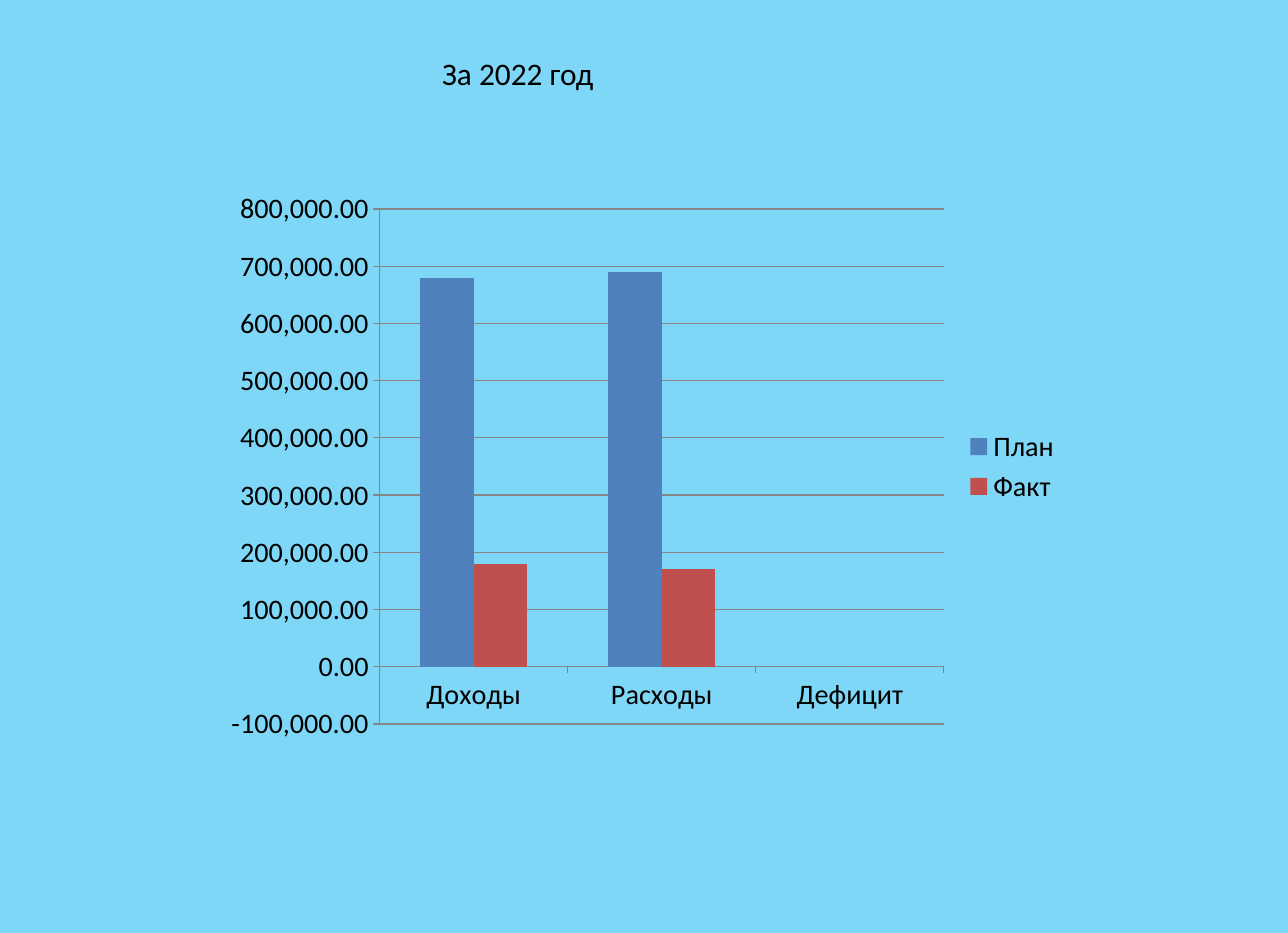
from pptx import Presentation
from pptx.chart.data import CategoryChartData as Data
from pptx.dml.color import RGBColor as Rgb
from pptx.enum.chart import XL_CHART_TYPE as Kind, XL_LEGEND_POSITION as Side, XL_TICK_MARK as Tick
from pptx.enum.text import MSO_ANCHOR as Anchor, MSO_AUTO_SIZE as Fit, PP_ALIGN as Align
from pptx.util import Inches, Pt

HUES = {"back": "7FD7F7", "text": "000000", "line": "868686",
        "План": "4F81BD", "Факт": "C0504D"}
NAMES = ["Доходы", "Расходы", "Дефицит"]
SUMS = {"План": (680000, 690000, 0), "Факт": (180000, 170000, 0)}


def hue(name):
    return Rgb.from_string(HUES[name])


def style(item, **looks):
    for key, value in looks.items():
        setattr(item, key, value)


def paint(fill, name):
    fill.solid()
    fill.fore_color.rgb = hue(name)


def write(font, size):
    style(font, name="Calibri", size=Pt(size), bold=False)
    font.color.rgb = hue("text")


def rule(line):
    line.width = Pt(0.75)
    line.color.rgb = hue("line")


def add_title(slide, left, top, width, height):
    title = slide.shapes.title
    style(title, left=Inches(left), top=Inches(top),
          width=Inches(width), height=Inches(height))
    frame = title.text_frame
    frame.text = "За 2022 год"
    style(frame, word_wrap=False, auto_size=Fit.SHAPE_TO_FIT_TEXT,
          vertical_anchor=Anchor.TOP)
    para = frame.paragraphs[0]
    para.alignment = Align.LEFT
    write(para.runs[0].font, 20)


def add_bars(slide, left, top, width, height):
    data = Data(number_format="#,##0.00")
    data.categories = NAMES
    for name, sums in SUMS.items():
        data.add_series(name, sums)
    box = map(Inches, (left, top, width, height))
    chart = slide.shapes.add_chart(Kind.COLUMN_CLUSTERED, *box, data).chart
    style(chart, has_title=False, has_legend=True)
    write(chart.font, 18)
    style(chart.legend, position=Side.RIGHT, include_in_layout=False)

    plot = chart.plots[0]
    style(plot, gap_width=150, overlap=0, vary_by_categories=False)
    for bar in plot.series:
        bar.invert_if_negative = False
        paint(bar.format.fill, bar.name)

    for axis in (chart.category_axis, chart.value_axis):
        style(axis, major_tick_mark=Tick.OUTSIDE, minor_tick_mark=Tick.NONE)
        rule(axis.format.line)
    scale = chart.value_axis
    style(scale, minimum_scale=-100000, maximum_scale=800000,
          major_unit=100000, has_major_gridlines=True)
    rule(scale.major_gridlines.format.line)
    style(scale.tick_labels, number_format="#,##0.00",
          number_format_is_linked=False)


def main():
    deck = Presentation()
    style(deck, slide_width=Inches(11.42), slide_height=Inches(8.27))
    slide = deck.slides.add_slide(deck.slide_layouts[5])
    paint(slide.background.fill, "back")
    add_title(slide, 3.82, 0.43, 1.55, 0.44)
    add_bars(slide, 1.9, 1.6, 7.61, 5.07)
    deck.save("out.pptx")


if __name__ == "__main__":
    main()
